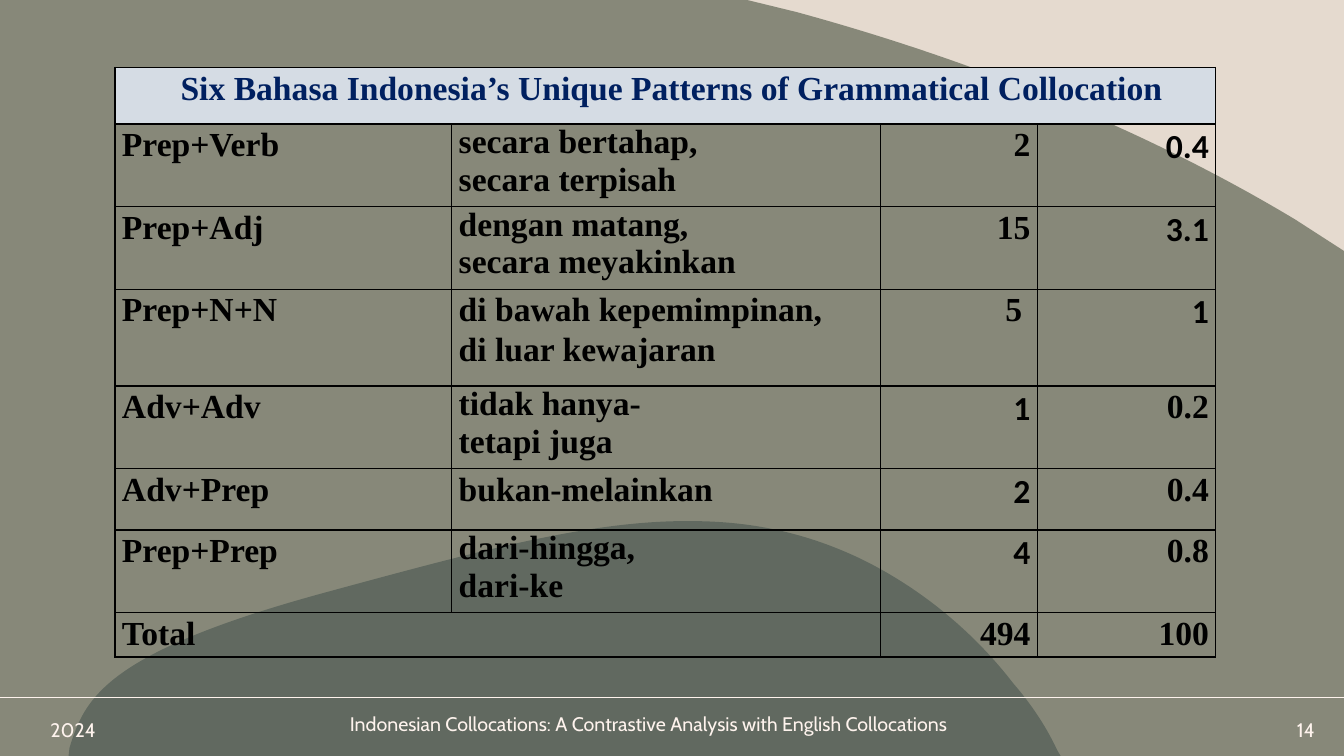
from dataclasses import dataclass

from lxml.etree import SubElement
from pptx import Presentation
from pptx.dml.color import RGBColor
from pptx.enum.text import MSO_ANCHOR as Anchor, PP_ALIGN as Align
from pptx.oxml import parse_xml
from pptx.oxml.ns import nsdecls, qn
from pptx.util import Inches, Pt


@dataclass(frozen=True)
class Theme:
    sand: str = "E5DACF"
    olive: str = "4E5745"
    slate: str = "5D6A76"
    cream: str = "FEF3ED"
    navy: str = "002060"
    pale: str = "D5DCE4"
    ink: str = "000000"
    serif: str = "Times New Roman"
    sans: str = "Calibri"
    foot: str = "Cabin"
    body: int = 24
    small: int = 14


THEME = Theme()
WIDE, HIGH = 13.33, 7.5
LOOSE = 1.07

# Each step lists its points: one for a straight line, three for a curve.
HILL = [[(6.85, 5.17)],
        [(7.44, 5.17), (7.99, 5.28), (8.55, 5.55)],
        [(9.3, 5.92), (9.79, 6.44), (10.05, 6.78)],
        [(10.19, 6.94), (10.36, 7.17), (10.49, 7.45)],
        [(10.52, 7.5)], [(0.68, 7.5)], [(0.69, 7.42)],
        [(0.71, 7.35), (0.73, 7.29), (0.76, 7.22)],
        [(0.93, 6.8), (1.35, 6.39), (3.22, 5.88)],
        [(4.73, 5.47), (5.86, 5.16), (6.85, 5.17)]]
FIELD = [[(0, 0)], [(7.41, 0)], [(7.9, 0.12)],
         [(9.73, 0.62), (11.42, 1.32), (12.85, 2.18)],
         [(13.33, 2.49)], [(13.33, 7.5)], [(0, 7.5)]]

TITLE = "Six Bahasa Indonesia’s Unique Patterns of Grammatical Collocation"
TOPIC = "Indonesian Collocations: A Contrastive Analysis with English Collocations"
COLS = [3.34, 4.25, 1.56, 1.77]
ROWS = [0.56, 0.82, 0.82, 0.96, 0.82, 0.61, 0.82, 0.44]
# Pattern, examples, count, share, column set in sans, spacing of examples
DATA = [
    ("Prep+Verb", "secara bertahap,\nsecara terpisah", "2", "0.4", 3, 1),
    ("Prep+Adj", "dengan matang,\nsecara meyakinkan", "15", "3.1", 3, 1),
    ("Prep+N+N", "di bawah kepemimpinan,\ndi luar kewajaran", "5 ", "1", 3, LOOSE),
    ("Adv+Adv", "tidak hanya-\ntetapi juga", "1", "0.2", 2, 1),
    ("Adv+Prep", "bukan-melainkan", "2", "0.4", 2, LOOSE),
    ("Prep+Prep", "dari-hingga,\ndari-ke", "4", "0.8", 2, 1),
    ("Total", "", "494", "100", None, LOOSE),
]


def rgb(code):
    return RGBColor.from_string(code)


def write(frame, text, font=THEME.serif, size=THEME.body, color=THEME.ink,
          bold=False, align=Align.LEFT, gap=1, indent=0):
    """Fill a text frame, one paragraph for each line of text."""
    for i, line in enumerate(text.split("\n")):
        para = frame.add_paragraph() if i else frame.paragraphs[0]
        para.alignment, para.line_spacing = align, gap
        if indent:
            para._p.get_or_add_pPr().set("marL", str(Inches(indent)))
        run = para.add_run()
        run.text = line
        run.font.name, run.font.size, run.font.bold = font, Pt(size), bold
        run.font.color.rgb = rgb(color)


def bend(shape, outline):
    """Turn the straight lines of a freeform into the outline's curves."""
    lines = list(shape._element.spPr.iter(qn("a:lnTo")))
    for line, points in zip(lines, outline[1:]):
        if len(points) == 3:
            curve = parse_xml(f'<a:cubicBezTo {nsdecls("a")}/>')
            for x, y in points:
                spot = SubElement(curve, qn("a:pt"))
                spot.set("x", str(Inches(x) - shape.left))
                spot.set("y", str(Inches(y) - shape.top))
            line.getparent().replace(line, curve)


def blob(slide, outline, color, alpha):
    first, *rest = [tuple(map(Inches, points[-1])) for points in outline]
    pen = slide.shapes.build_freeform(*first)
    pen.add_line_segments(rest, close=True)
    shape = pen.convert_to_shape()
    bend(shape, outline)
    shape.shadow.inherit = False
    shape.line.fill.background()
    shape.fill.solid()
    shape.fill.fore_color.rgb = rgb(color)
    tint = shape._element.spPr.find(".//" + qn("a:srgbClr"))
    SubElement(tint, qn("a:alpha")).set("val", str(alpha * 1000))


def backdrop(slide, rule_top):
    fill = slide.background.fill
    fill.solid()
    fill.fore_color.rgb = rgb(THEME.sand)
    blob(slide, HILL, THEME.slate, 73)
    blob(slide, FIELD, THEME.olive, 62)
    rule = slide.shapes.add_connector(
        1, 0, Inches(rule_top), Inches(WIDE), Inches(rule_top))
    rule.line.color.rgb = rgb(THEME.cream)
    rule.line.width = Pt(1.25)
    SubElement(rule._element.spPr, qn("a:effectLst"))


def frame_cell(cell):
    """Set the margins, clear the fill and draw the four borders."""
    cell.margin_left = cell.margin_right = Inches(0.07)
    cell.margin_top = cell.margin_bottom = 0
    cell.fill.background()
    props = cell._tc.get_or_add_tcPr()
    for i, side in enumerate("LRTB"):
        props.insert(i, parse_xml(
            f'<a:ln{side} {nsdecls("a")} w="{Pt(1)}"><a:solidFill>'
            f'<a:srgbClr val="{THEME.ink}"/></a:solidFill></a:ln{side}>'))


def grid(slide, left, top, wide, high):
    table = slide.shapes.add_table(
        len(ROWS), len(COLS), *map(Inches, (left, top, wide, high))).table
    table.first_row = table.horz_banding = False
    for col, size in zip(table.columns, COLS):
        col.width = Inches(size)
    for row, size in zip(table.rows, ROWS):
        row.height = Inches(size)
    for cell in table.iter_cells():
        frame_cell(cell)

    head = table.cell(0, 0)
    head.merge(table.cell(0, len(COLS) - 1))
    head.fill.solid()
    head.fill.fore_color.rgb = rgb(THEME.pale)
    write(head.text_frame, TITLE, color=THEME.navy, bold=True,
          align=Align.CENTER, gap=LOOSE, indent=0.12)

    last = len(ROWS) - 1
    table.cell(last, 0).merge(table.cell(last, 1))
    for r, (*texts, sans, gap) in enumerate(DATA, 1):
        for c, text in enumerate(texts):
            if text:
                write(table.cell(r, c).text_frame, text, bold=True,
                      font=THEME.sans if c == sans else THEME.serif,
                      align=Align.RIGHT if c > 1 else Align.JUSTIFY,
                      gap=gap if c == 1 else LOOSE)


def footer(slide, top):
    for left, drop, wide, text, align in (
            (0.4, 0.15, 1.08, "2024", Align.LEFT),
            (2.02, 0.09, 8.83, TOPIC, Align.CENTER),
            (12.06, 0.15, 1.08, "14", Align.RIGHT)):
        box = slide.shapes.add_textbox(
            *map(Inches, (left, top + drop, wide, 0.34))).text_frame
        box.word_wrap, box.vertical_anchor = True, Anchor.MIDDLE
        write(box, text, font=THEME.foot, size=THEME.small,
              color=THEME.cream, align=align)


def main():
    deck = Presentation()
    deck.slide_width, deck.slide_height = Inches(WIDE), Inches(HIGH)
    slide = deck.slides.add_slide(deck.slide_layouts[6])
    rule_top = 6.92
    backdrop(slide, rule_top)
    grid(slide, 1.14, 0.67, sum(COLS), sum(ROWS))
    footer(slide, rule_top)
    deck.save("out.pptx")


if __name__ == "__main__":
    main()
